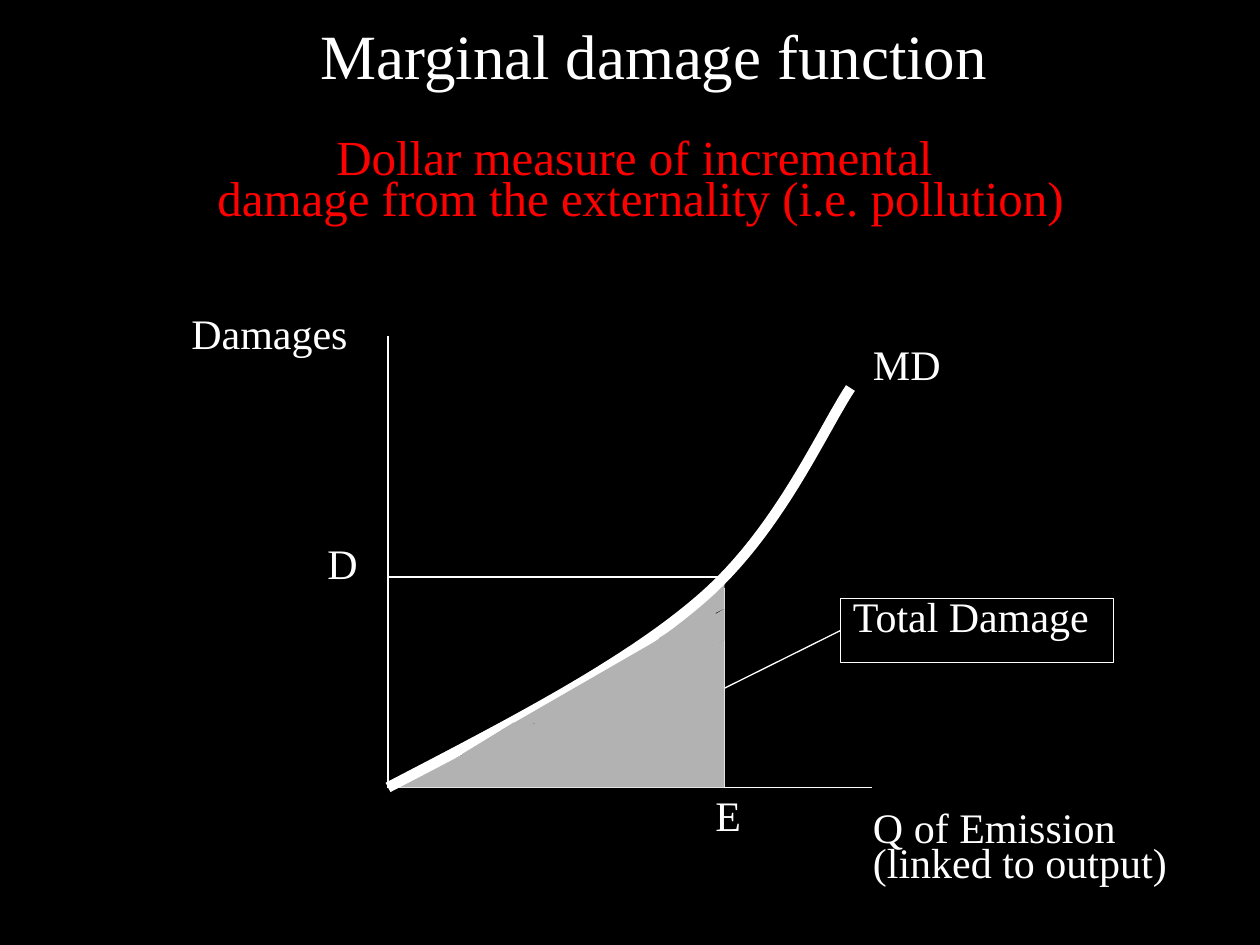
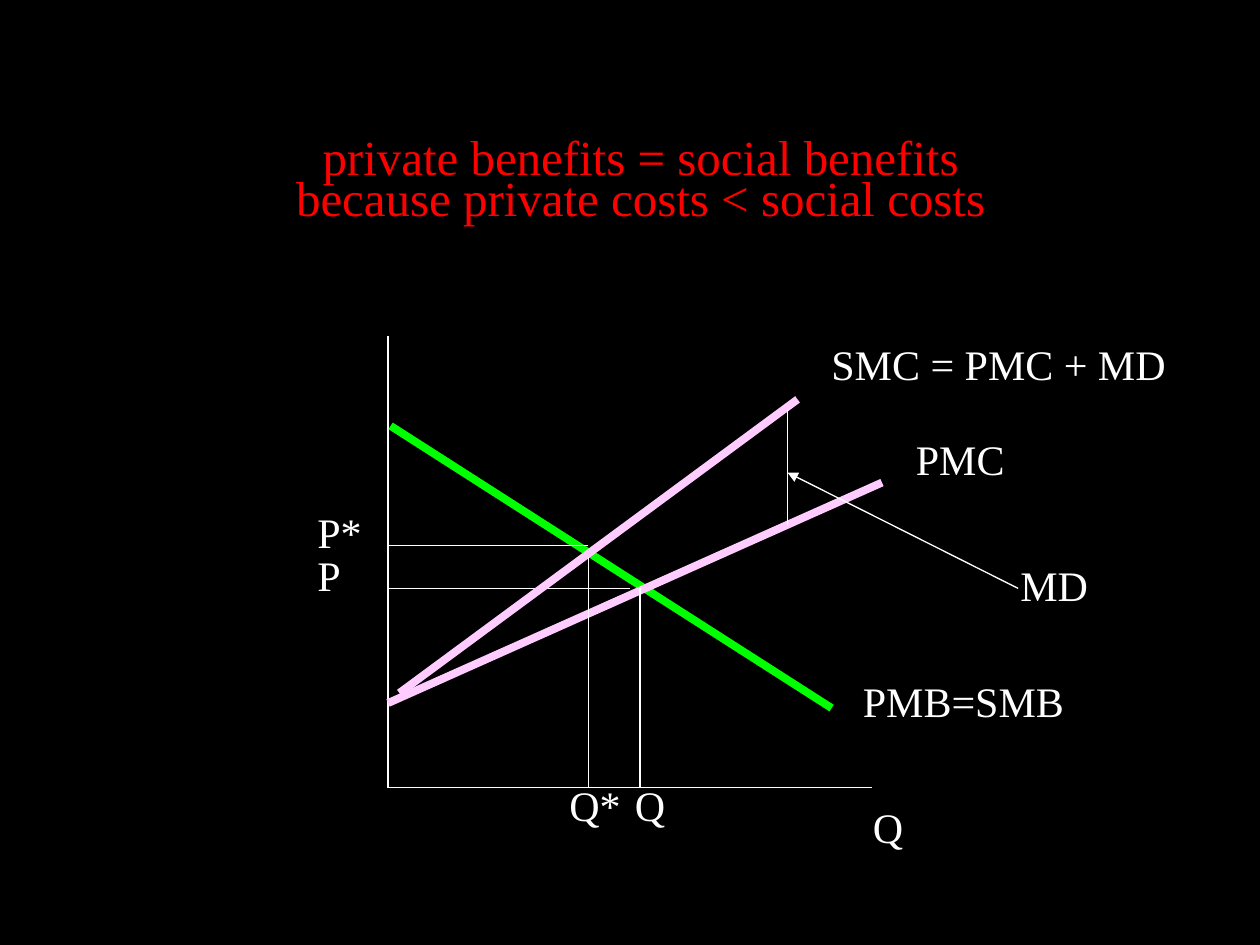
import pptx
import pptx.util
import pptx.dml.color
import pptx.enum.shapes
import pptx.enum.text
import pptx.oxml
import pptx.oxml.ns

Inches = pptx.util.Inches
COLORS = {
    "black": "000000",
    "white": "FFFFFF",
    "red": "FF0000",
    "gray": "B2B2B2",
    "green": "00FF00",
    "pink": "FFCCFF",
}
FONT = "Times New Roman"
LEFT, TOP, BASE, RIGHT = 3.08, 2.67, 6.25, 6.92


def color(name):
    return pptx.dml.color.RGBColor.from_string(COLORS[name])


def paint(fill, name):
    fill.solid()
    fill.fore_color.rgb = color(name)


def write(frame, text, size=24, ink="white", align="LEFT"):
    frame.word_wrap = True
    frame.vertical_anchor = pptx.enum.text.MSO_ANCHOR.TOP
    para = frame.paragraphs[0]
    para.text = text
    para.alignment = getattr(pptx.enum.text.PP_ALIGN, align)
    para.line_spacing = 0.7
    for run in para.runs:
        run.font.name = FONT
        run.font.size = pptx.util.Pt(size)
        run.font.color.rgb = color(ink)


def label(slide, text, left, top, width=0.83, height=0.5, **style):
    box = slide.shapes.add_textbox(*map(Inches, (left, top, width, height)))
    write(box.text_frame, text, **style)


def banner(slide, text):
    label(slide, text, 0.75, 1.08, 8.67, 0.77, size=28, ink="red", align="CENTER")


def line(slide, start, end, ink="white", width=0.75, arrow=None):
    link = slide.shapes.add_connector(
        pptx.enum.shapes.MSO_CONNECTOR.STRAIGHT, *map(Inches, (*start, *end)))
    link.line.color.rgb = color(ink)
    link.line.width = pptx.util.Pt(width)
    if arrow:
        tip = pptx.oxml.parse_xml(
            f'<a:{arrow} {pptx.oxml.ns.nsdecls("a")} type="triangle"/>')
        link.line._get_or_add_ln().append(tip)
    link._element.spPr.append(
        pptx.oxml.parse_xml(f'<a:effectLst {pptx.oxml.ns.nsdecls("a")}/>'))
    return link


def outline(slide, points, close):
    spots = [(Inches(x), Inches(y)) for x, y in points]
    pen = slide.shapes.build_freeform(*spots[0])
    pen.add_line_segments(spots[1:], close=close)
    shape = pen.convert_to_shape()
    shape.shadow.inherit = False
    return shape


def area(slide, points):
    shape = outline(slide, points, True)
    paint(shape.fill, "gray")
    shape.line.fill.background()


def bend(a, b, c, d, steps=24):
    for step in range(steps + 1):
        t = step / steps
        u = 1 - t
        yield tuple(u**3 * p + 3 * u * u * t * q + 3 * u * t * t * r + t**3 * s
                    for p, q, r, s in zip(a, b, c, d))


def curve(slide, first, second):
    points = [*bend(*first), *list(bend(*second))[1:]]
    shape = outline(slide, points, False)
    shape.fill.background()
    shape.line.color.rgb = color("white")
    shape.line.width = pptx.util.Pt(6)


def frame_box(slide, text, left, top, width, height):
    box = slide.shapes.add_shape(
        pptx.enum.shapes.MSO_SHAPE.RECTANGLE,
        *map(Inches, (left, top, width, height)))
    box.shadow.inherit = False
    box.fill.background()
    box.line.color.rgb = color("white")
    box.line.width = pptx.util.Pt(0.75)
    write(box.text_frame, text)
    return box


def axes(slide):
    line(slide, (LEFT, TOP), (LEFT, BASE))
    line(slide, (LEFT, BASE), (RIGHT, BASE))


def guides(slide, x, y, gap=0.0, inset=0.0):
    line(slide, (x, y + gap), (x, BASE))
    line(slide, (x - inset, y), (LEFT, y))


def new_slide(deck):
    slide = deck.slides.add_slide(deck.slide_layouts[6])
    paint(slide.background.fill, "black")
    return slide


def damage(deck):
    slide = new_slide(deck)
    label(slide, "Marginal damage function", 1.15, 0.25, 8.08,
          size=36, align="CENTER")
    banner(slide, "Dollar measure of incremental \v"
                  "damage from the externality (i.e. pollution)")
    axes(slide)
    label(slide, "Q of Emission\v(linked to output)", 6.83, 6.42, 2.67, 0.68)
    label(slide, "E", 5.58, 6.33)
    guides(slide, 5.75, 4.58, gap=0.09)
    label(slide, "Damages", 1.42, 2.5, 1.75)
    label(slide, "MD", 6.83, 2.75, 1.92)
    total = frame_box(slide, "Total Damage", 6.67, 4.75, 2.17, 0.51)
    line(slide, (6.67, 5), (5.17, 5.75), arrow="tailEnd").begin_connect(total, 1)
    area(slide, [(5.75, BASE), (LEFT, BASE), (5.75, 5.08)])
    area(slide, [(5.75, 4.58), (5.75, 5.08), (3.83, 6), (5.75, 4.83)])
    area(slide, [(5.75, 4.58), (4.92, 5.25), (5.75, 4.83)])
    line(slide, (5.67, 4.83), (4.33, 5.67), ink="gray")
    curve(slide,
          [(LEFT, BASE), (4.02, 5.76), (4.96, 5.28), (5.57, 4.75)],
          [(5.57, 4.75), (6.18, 4.22), (6.52, 3.43), (6.75, 3.08)])
    label(slide, "D", 2.5, 4.33)
    for start, end in [((5.58, 4.92), (4, 5.83)), ((4.67, 5.5), (4.25, 5.75)),
                       ((4.1, 5.77), (3.69, 6.02)), ((5.67, 4.85), (5.25, 5.1))]:
        line(slide, start, end, ink="gray", width=6)


def market(deck):
    slide = new_slide(deck)
    banner(slide, "private benefits = social benefits\v"
                  "because private costs < social costs")
    axes(slide)
    line(slide, (3.1, 3.38), (6.6, 5.62), ink="green", width=4.5)
    line(slide, (LEFT, 5.58), (7, 3.83), ink="pink", width=4.5)
    guides(slide, 5.08, 4.67, inset=0.08)
    line(slide, (3.17, 5.5), (6.33, 3.17), ink="pink", width=4.5)
    guides(slide, 4.67, 4.33, gap=0.09)
    line(slide, (6.25, 3.25), (6.25, 4.17))
    line(slide, (6.25, 3.75), (8.08, 4.67), arrow="headEnd")
    for text, left, top, width in [
        ("SMC = PMC + MD", 6.5, 2.75, 3.5),
        ("PMC", 7.17, 3.5, 1.92),
        ("PMB=SMB", 6.75, 5.42, 1.92),
        ("MD", 8, 4.5, 1.67),
        ("P*", 2.42, 4.08, 0.67),
        ("P", 2.42, 4.42, 0.67),
        ("Q*", 4.42, 6.25, 0.83),
        ("Q", 4.94, 6.25, 0.83),
        ("Q", 6.83, 6.42, 0.67),
    ]:
        label(slide, text, left, top, width)


def main():
    deck = pptx.Presentation()
    deck.slide_width = Inches(10)
    deck.slide_height = Inches(7.5)
    damage(deck)
    market(deck)
    deck.save("out.pptx")


if __name__ == "__main__":
    main()
